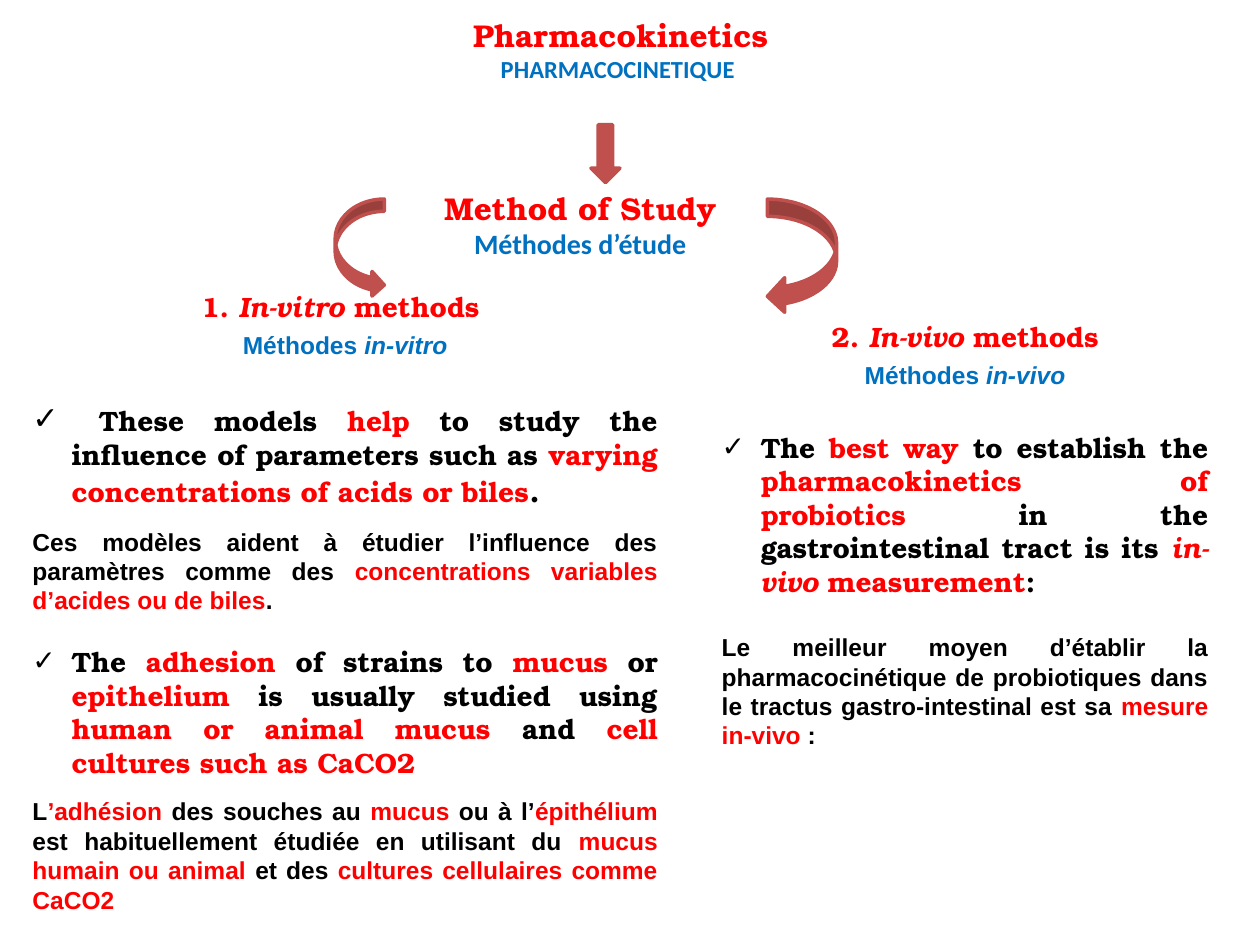
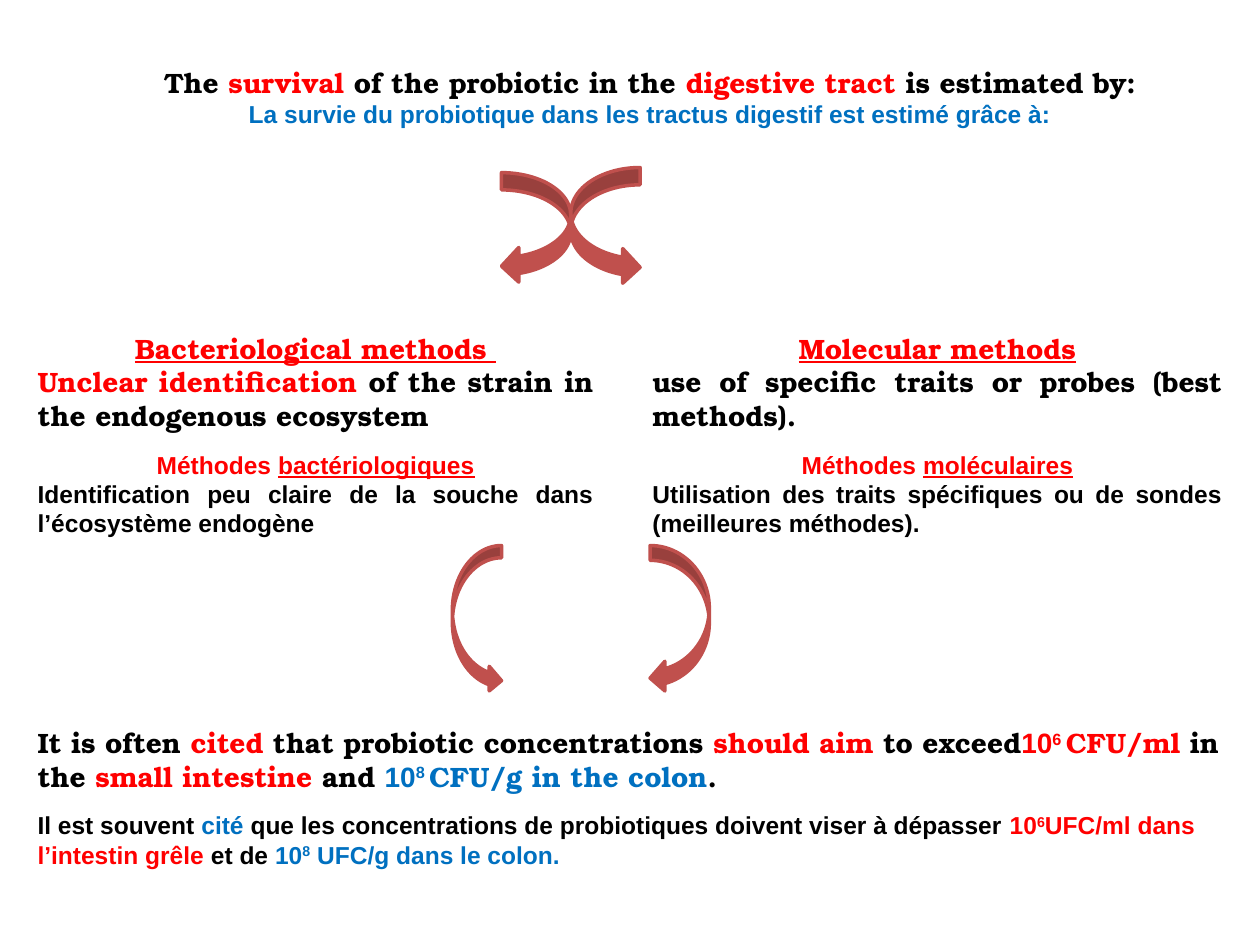
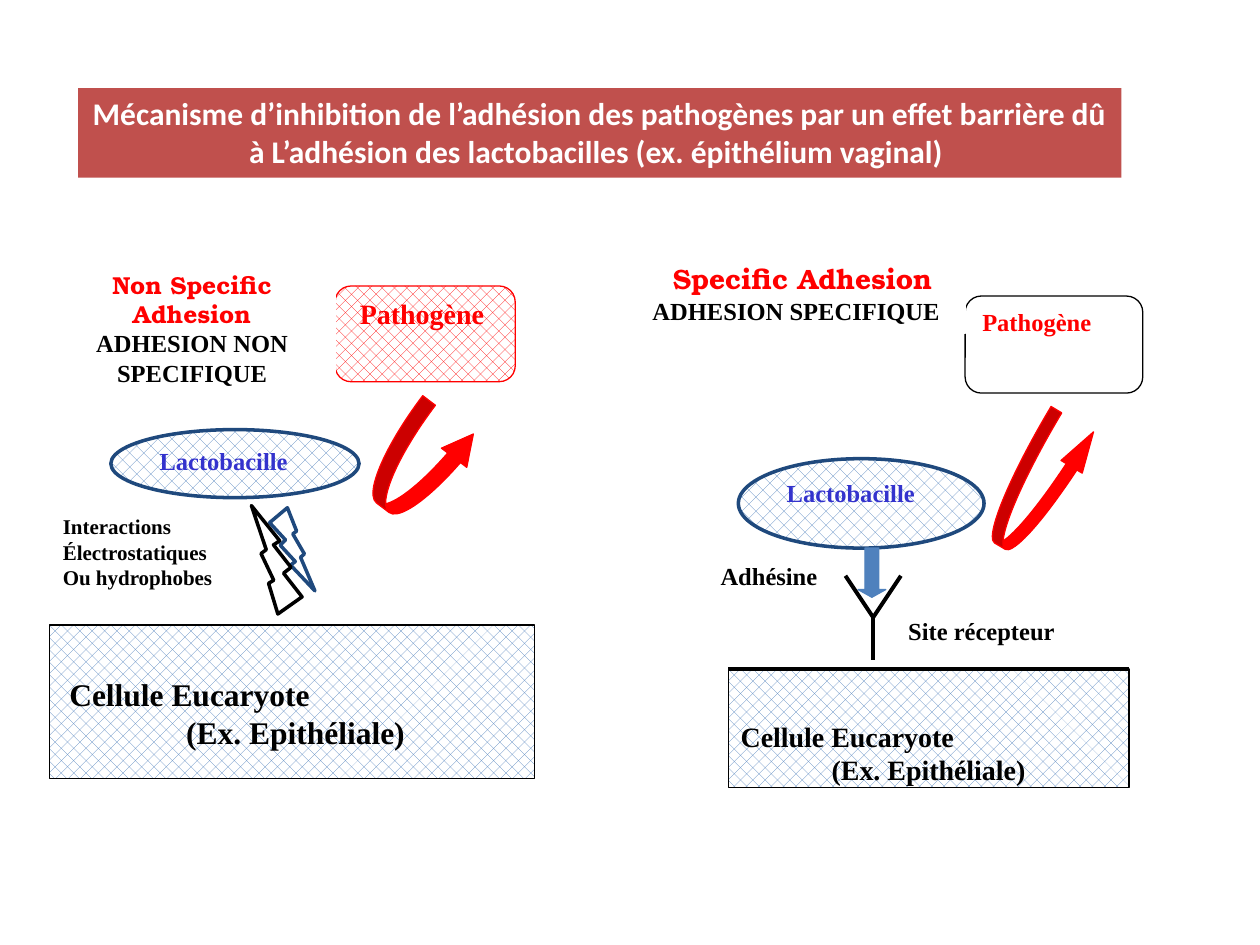
"""Build three slides on probiotic pharmacokinetics and adhesion."""
from dataclasses import dataclass
from functools import partial
from typing import NamedTuple, Optional

from lxml.etree import SubElement
from pptx import Presentation
from pptx.dml.color import RGBColor
from pptx.enum.dml import MSO_PATTERN as Pattern
from pptx.enum.shapes import MSO_CONNECTOR, MSO_SHAPE as Kind
from pptx.enum.text import MSO_ANCHOR, PP_ALIGN as Align
from pptx.oxml.ns import qn
from pptx.util import Inches, Pt

COLORS = {
    "black": "000000", "white": "FFFFFF", "red": "FF0000", "blue": "0070C0",
    "brick": "C0504D", "steel": "4F81BD", "navy": "1F497D", "violet": "3333CD",
}
BONUM, ARIAL, CALIBRI, TIMES = "TeX Gyre Bonum", "Arial", "Calibri", "Times New Roman"


class Box(NamedTuple):
    left: float
    top: float
    width: float
    height: float


@dataclass
class Run:
    text: str
    color: Optional[str] = None
    italic: bool = False
    underline: bool = False
    superscript: bool = False
    font: Optional[str] = None
    size: Optional[float] = None


@dataclass
class Line:
    runs: list
    font: str
    size: float
    color: str = "black"
    align: Align = Align.LEFT
    before: float = 0
    bullet: bool = False


@dataclass
class Figure:
    kind: Kind
    box: Box
    fill: str = "white"
    line: Optional[str] = "white"
    weight: float = 0.75
    pattern: Optional[Pattern] = None
    rotation: float = 0
    adjustments: tuple = ()
    lines: tuple = ()
    margin_left: float = 0.1
    margin_top: float = 0.05


Red = partial(Run, color="red")
Blue = partial(Run, color="blue")
English = partial(Line, font=BONUM, size=16)
French = partial(Line, font=ARIAL, size=14)
Label = partial(Line, font=TIMES, size=14)
CENTER, JUSTIFY = Align.CENTER, Align.JUSTIFY


def rgb(name: str) -> RGBColor:
    """Return the named colour."""
    return RGBColor.from_string(COLORS[name])


def add_bullet(paragraph) -> None:
    """Give the paragraph a hanging check mark."""
    properties = paragraph._p.get_or_add_pPr()
    properties.set("marL", str(Inches(0.31)))
    properties.set("indent", str(-Inches(0.31)))
    SubElement(properties, qn("a:buFont")).set("typeface", ARIAL)
    SubElement(properties, qn("a:buChar")).set("char", "✓")


def write_run(paragraph, item: Run) -> None:
    """Add a run that sets only what differs from its paragraph."""
    run = paragraph.add_run()
    run.text = item.text
    if item.color:
        run.font.color.rgb = rgb(item.color)
    if item.font:
        run.font.name = item.font
    if item.size:
        run.font.size = Pt(item.size)
    if item.italic:
        run.font.italic = True
    if item.underline:
        run.font.underline = True
    if item.superscript:
        run._r.get_or_add_rPr().set("baseline", "30000")


def write_lines(frame, lines: tuple) -> None:
    """Fill a text frame with paragraphs."""
    frame.word_wrap = True
    frame.vertical_anchor = MSO_ANCHOR.TOP
    for index, line in enumerate(lines):
        paragraph = frame.add_paragraph() if index else frame.paragraphs[0]
        if line.before:
            paragraph.space_before = Pt(line.before)
        if line.bullet:
            add_bullet(paragraph)
        paragraph.alignment = line.align
        font = paragraph.font
        font.name, font.size, font.bold = line.font, Pt(line.size), True
        font.color.rgb = rgb(line.color)
        for item in line.runs:
            write_run(paragraph, item)


def add_text(slide, box: Box, *lines: Line) -> None:
    """Add a text box."""
    shape = slide.shapes.add_textbox(*map(Inches, box))
    write_lines(shape.text_frame, lines)


def add_figure(slide, figure: Figure) -> None:
    """Add a preset shape with its fill, outline and text."""
    shape = slide.shapes.add_shape(figure.kind, *map(Inches, figure.box))
    shape.shadow.inherit = False
    shape.rotation = figure.rotation
    for index, value in enumerate(figure.adjustments):
        shape.adjustments[index] = value
    if figure.pattern:
        shape.fill.patterned()
        shape.fill.pattern = figure.pattern
        shape.fill.fore_color.rgb = rgb(figure.fill)
        shape.fill.back_color.rgb = rgb("white")
    else:
        shape.fill.solid()
        shape.fill.fore_color.rgb = rgb(figure.fill)
    if figure.line:
        shape.line.color.rgb = rgb(figure.line)
        shape.line.width = Pt(figure.weight)
    else:
        shape.line.fill.background()
    if figure.lines:
        shape.text_frame.margin_left = Inches(figure.margin_left)
        shape.text_frame.margin_top = Inches(figure.margin_top)
        write_lines(shape.text_frame, figure.lines)


def add_line(slide, start: tuple, end: tuple) -> None:
    """Add a straight black line."""
    line = slide.shapes.add_connector(MSO_CONNECTOR.STRAIGHT, *map(Inches, start + end))
    line.line.color.rgb = rgb("black")
    line.line.width = Pt(2.25)
    SubElement(line._element.spPr, qn("a:effectLst"))


BrickArrow = partial(Figure, fill="brick", line="brick", weight=2)
RedArrow = partial(Figure, Kind.CURVED_UP_ARROW, fill="red", line="red")


def build_methods(slide) -> None:
    """Draw the in-vitro and in-vivo study methods."""
    add_text(
        slide, Box(0.08, 0.08, 9.69, 0.64),
        Line([Run("Pharmacokinetics")], BONUM, 18, "red", CENTER),
        Line([Run("PHARMACOCINETIQUE ")], CALIBRI, 14, "blue", CENTER))
    add_text(
        slide, Box(0.16, 2.25, 5.16, 5.22),
        English([Run("1. "), Run("In-vitro ", italic=True), Run("methods ")],
                color="red", align=CENTER),
        French([Run("Méthodes "), Run("in-vitro", italic=True)],
               color="blue", align=CENTER, before=4),
        English([Run(" ", font=CALIBRI, size=18), Run("These models "), Red("help"),
                 Run(" to study the influence of parameters such as "),
                 Red("varying concentrations of acids or biles"), Run(".", size=18)],
                align=JUSTIFY, before=23, bullet=True),
        French([Run("Ces modèles aident à étudier l’influence des paramètres comme des "),
                Red("concentrations variables d’acides ou de biles"), Run(". ")],
               align=JUSTIFY, before=10),
        English([Run("The "), Red("adhesion"), Run(" of strains to "), Red("mucus"),
                 Run(" or "), Red("epithelium"), Run(" is usually studied using "),
                 Red("human or animal mucus "), Run("and "),
                 Red("cell cultures such as CaCO2")],
                align=JUSTIFY, before=17, bullet=True),
        French([Run("L"), Red("’adhésion"), Run(" des souches au "), Red("mucus"),
                Run(" ou à l’"), Red("épithélium"),
                Run(" est habituellement étudiée en utilisant du "),
                Red("mucus humain ou animal "), Run("et des "),
                Red("cultures cellulaires comme CaCO2")],
               align=JUSTIFY, before=10))
    add_text(
        slide, Box(5.63, 2.49, 4.06, 3.26),
        English([Run("2. "), Run("In-vivo ", italic=True), Run("methods")],
                color="red", align=CENTER),
        French([Run("Méthodes"), Run(" in-vivo", italic=True)],
               color="blue", align=CENTER, before=4),
        English([Run("The "), Red("best way "), Run("to establish the "),
                 Red("pharmacokinetics of probiotics "),
                 Run("in the gastrointestinal tract is its "),
                 Red("in-vivo", italic=True), Red(" measurement"), Run(":")],
                align=JUSTIFY, before=23, bullet=True),
        French([Run("Le meilleur moyen d’établir la pharmacocinétique de probiotiques "
                    "dans le tractus gastro-intestinal est sa "),
                Red("mesure in-vivo"), Run(" :")],
               align=JUSTIFY, before=19.5))
    add_text(
        slide, Box(3.2, 1.45, 2.81, 0.67),
        Line([Run("Method of Study")], BONUM, 18, "red", CENTER),
        Line([Run("Méthodes d’étude")], CALIBRI, 16, "blue", CENTER))
    for kind, box in (
        (Kind.DOWN_ARROW, Box(4.69, 0.99, 0.23, 0.46)),
        (Kind.CURVED_RIGHT_ARROW, Box(2.66, 1.58, 0.39, 0.78)),
        (Kind.CURVED_LEFT_ARROW, Box(6.09, 1.58, 0.55, 0.91)),
    ):
        add_figure(slide, BrickArrow(kind, box))


def build_survival(slide) -> None:
    """Draw the ways of estimating probiotic survival."""
    add_text(
        slide, Box(0.91, 0.47, 8.5, 0.61),
        English([Run("The "), Red("survival"), Run(" of the probiotic in the "),
                 Red("digestive tract "), Run("is estimated by:")], align=CENTER),
        French([Run("La survie du probiotique dans les tractus digestif est estimé grâce à:")],
               color="blue", align=CENTER))
    for box, title, english, french_title, french in (
        (Box(0.2, 2.58, 4.61, 1.75), "Bacteriological methods ",
         [Red("Unclear identification"), Run(" of the strain in the endogenous ecosystem")],
         "bactériologiques",
         "Identification peu claire de la souche dans l’écosystème endogène"),
        (Box(5.08, 2.58, 4.72, 1.75), "Molecular methods",
         [Run("use of specific traits or probes (best methods).")],
         "moléculaires",
         "Utilisation des traits spécifiques ou de sondes (meilleures méthodes)."),
    ):
        add_text(
            slide, box,
            English([Run(title, underline=True)], color="red", align=CENTER),
            English(english, align=JUSTIFY),
            French([Run("Méthodes "), Run(french_title, underline=True)],
                   color="red", align=CENTER, before=10),
            French([Run(french)], align=JUSTIFY))
    add_text(
        slide, Box(0.2, 5.71, 9.6, 1.25),
        English([Run("It is often "), Red("cited"), Run(" that probiotic concentrations "),
                 Red("should aim "), Run("to exceed"), Red("10", font=ARIAL),
                 Red("6 ", font=ARIAL, superscript=True), Red("CFU/ml "), Run("in the "),
                 Red("small intestine "), Run("and "), Blue("10", font=ARIAL),
                 Blue("8 ", font=ARIAL, superscript=True), Blue("CFU/g in the colon"),
                 Run(".")]),
        French([Run("Il est souvent "), Blue("cité"),
                Run(" que les concentrations de probiotiques doivent viser à dépasser "),
                Red("10"), Red("6", superscript=True), Red("UFC/ml dans l’intestin grêle "),
                Run("et de "), Blue("10"), Blue("8", superscript=True),
                Blue(" UFC/g dans le colon.")], before=10))
    for kind, box in (
        (Kind.CURVED_LEFT_ARROW, Box(3.98, 1.37, 0.55, 0.88)),
        (Kind.CURVED_RIGHT_ARROW, Box(4.53, 1.33, 0.55, 0.93)),
        (Kind.CURVED_RIGHT_ARROW, Box(3.59, 4.33, 0.39, 1.17)),
        (Kind.CURVED_LEFT_ARROW, Box(5.16, 4.33, 0.47, 1.17)),
    ):
        add_figure(slide, BrickArrow(kind, box))


def cell(box: Box, size: float, margin_left: float) -> Figure:
    """Describe the host cell."""
    return Figure(
        Kind.RECTANGLE, box, "steel", "black", pattern=Pattern.PERCENT_30,
        lines=(Label([Run("Cellule Eucaryote")], size=size),
               Label([Run("(Ex. Epithéliale)")], size=size, align=CENTER)),
        margin_left=margin_left, margin_top=0.4)


def lactobacillus(box: Box) -> Figure:
    """Describe a lactobacillus."""
    return Figure(Kind.OVAL, box, "steel", "navy", 2, Pattern.PERCENT_25,
                  lines=(Label([Run("Lactobacille")], color="violet"),))


def pathogen(box: Box, size: float, **look) -> Figure:
    """Describe a pathogen."""
    return Figure(Kind.ROUNDED_RECTANGLE, box, adjustments=(0.167,),
                  lines=(Label([Run("Pathogène")], size=size, color="red"),), **look)


def caption(box: Box, *lines: Line) -> Figure:
    """Describe a white caption."""
    return Figure(Kind.RECTANGLE, box, lines=lines)


def build_adhesion(slide) -> None:
    """Draw non-specific and specific adhesion side by side."""
    for figure in (
        Figure(Kind.LIGHTNING_BOLT, Box(2.14, 4.03, 0.36, 0.66), line="navy", weight=2),
        cell(Box(0.39, 4.96, 3.85, 1.22), 18, 0.16),
        lactobacillus(Box(0.88, 3.41, 1.97, 0.54)),
        pathogen(Box(2.66, 2.27, 1.43, 0.76), 16, fill="red", line="red",
                 pattern=Pattern.PERCENT_30, margin_left=0.16),
        caption(Box(0.39, 2.09, 2.27, 1.03),
                English([Run("Non Specific Adhesion")], size=14, color="red", align=CENTER),
                Label([Run("ADHESION NON")], align=CENTER),
                Label([Run("SPECIFIQUE")], align=CENTER)),
        Figure(Kind.LIGHTNING_BOLT, Box(1.96, 4.03, 0.46, 0.84), line="black", weight=2,
               rotation=184.7),
        caption(Box(0.4, 4.03, 1.58, 0.84),
                *(Label([Run(text)], size=12)
                  for text in ("Interactions", "Électrostatiques", "Ou hydrophobes"))),
        RedArrow(Box(3.02, 3.24, 0.63, 0.9), rotation=37.1, adjustments=(0.2, 0.4, 0.385)),
        cell(Box(5.78, 5.31, 3.18, 0.94), 16, 0.1),
        lactobacillus(Box(5.86, 3.64, 1.95, 0.71)),
        pathogen(Box(7.66, 2.35, 1.41, 0.77), 14, line="black"),
        caption(Box(5.08, 2.03, 2.58, 0.62),
                English([Run("Specific Adhesion")], color="red", align=CENTER),
                Label([Run("ADHESION SPECIFIQUE")])),
        RedArrow(Box(8.01, 3.27, 0.49, 1.16), rotation=30.9, adjustments=(0.2, 0.4, 0.668)),
        Figure(Kind.DOWN_ARROW, Box(6.81, 4.35, 0.22, 0.39), "steel", "steel",
               adjustments=(0.5, 0.278)),
    ):
        add_figure(slide, figure)
    add_line(slide, (5.78, 5.31), (8.96, 5.31))
    for tip in ((6.93, 5.24), (7.15, 4.57), (6.71, 4.57)):
        add_line(slide, (6.93, 4.9), tip)
    for box, text in ((Box(5.62, 4.4, 1.01, 0.42), "Adhésine"),
                      (Box(7.11, 4.84, 1.48, 0.42), "Site récepteur")):
        add_figure(slide, caption(box, Label([Run(text)])))
    add_figure(slide, Figure(
        Kind.RECTANGLE, Box(0.62, 0.7, 8.28, 0.71), "brick", None,
        lines=(Line([Run("Mécanisme d’inhibition de l’adhésion des pathogènes par un effet "
                         "barrière dû à L’adhésion des lactobacilles (ex. épithélium vaginal) ")],
                    CALIBRI, 18, "white", CENTER),)))


def main() -> None:
    """Build and save the presentation."""
    presentation = Presentation()
    presentation.slide_width, presentation.slide_height = Inches(10), Inches(7.5)
    for build in (build_methods, build_survival, build_adhesion):
        build(presentation.slides.add_slide(presentation.slide_layouts[6]))
    presentation.save("out.pptx")


if __name__ == "__main__":
    main()
